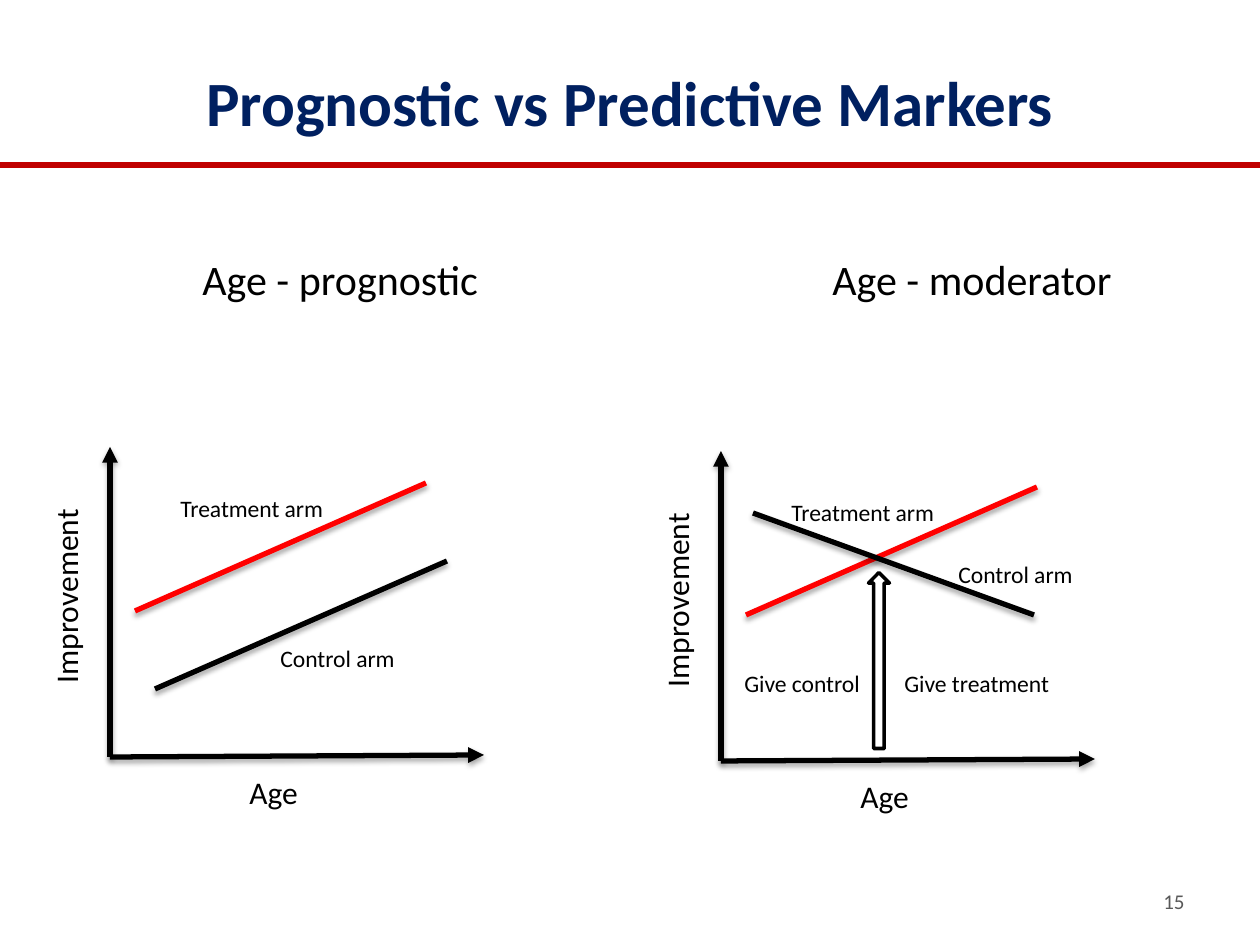
"""Build a slide contrasting a prognostic marker with a moderator."""
from lxml import etree
from pptx import Presentation
from pptx.dml.color import RGBColor
from pptx.enum.shapes import MSO_CONNECTOR, MSO_SHAPE
from pptx.enum.text import MSO_ANCHOR, PP_ALIGN
from pptx.oxml import parse_xml
from pptx.oxml.ns import nsdecls, qn
from pptx.util import Pt

SCALE = 914400 / 126
SHADOW = (
    f'<a:effectLst {nsdecls("a")}><a:outerShdw blurRad="39370" dist="22860" '
    'dir="5400000" rotWithShape="0"><a:srgbClr val="000000">'
    '<a:alpha val="35000"/></a:srgbClr></a:outerShdw></a:effectLst>'
)

prs = Presentation()
prs.slide_width, prs.slide_height = round(1260 * SCALE), round(945 * SCALE)
s = prs.slides.add_slide(prs.slide_layouts[6])


def add_text(text, box, size, color="000000", bold=False, align=PP_ALIGN.LEFT,
             anchor=MSO_ANCHOR.TOP, rotation=0):
    sp = s.shapes.add_textbox(*[round(v * SCALE) for v in box])
    sp.rotation = rotation
    tf = sp.text_frame
    tf.word_wrap = True
    tf.vertical_anchor = anchor
    tf.text = text
    p = tf.paragraphs[0]
    p.alignment = align
    font = p.runs[0].font
    font.name, font.size, font.bold = "Calibri", Pt(size), bold
    font.color.rgb = RGBColor.from_string(color)


def add_line(ends, color="000000", arrow=False, shadow=True):
    c = s.shapes.add_connector(MSO_CONNECTOR.STRAIGHT, *[round(v * SCALE) for v in ends])
    c.line.color.rgb = RGBColor.from_string(color)
    c.line.width = Pt(3)
    if arrow:
        etree.SubElement(c.line._get_or_add_ln(), qn("a:tailEnd"), type="triangle")
    effects = SHADOW if shadow else f'<a:effectLst {nsdecls("a")}/>'
    c._element.spPr.append(parse_xml(effects))


add_line((0, 165, 1260, 165), "C00000", shadow=False)
add_text("Prognostic vs Predictive Markers", (63, 38, 1134, 127), 36, "002060",
         bold=True, align=PP_ALIGN.CENTER, anchor=MSO_ANCHOR.MIDDLE)

plots = [
    ("Age - prognostic", 190, 0, 0, (155, 689, 447, 561), (268, 638)),
    ("Age - moderator", 820, 611, 4, (753, 513, 1034, 615), (946, 554)),
]
for heading, heading_x, dx, dy, control, control_label in plots:
    add_text(heading, (heading_x, 247, 340, 64), 24)
    add_line((135 + dx, 611 + dy, 426 + dx, 483 + dy), "FF0000")
    add_line(control)
    add_line((110 + dx, 757 + dy, 484 + dx, 755 + dy), arrow=True)
    add_line((110 + dx, 757 + dy, 110 + dx, 447 + dy), arrow=True)
    add_text("Age", (237 + dx, 767 + dy, 87, 50), 18)
    add_text("Improvement", (-102 + dx, 503 + dy, 335, 50), 18, rotation=270)
    add_text("Treatment arm", (168 + dx, 488 + dy, 169, 42), 13.5)
    add_text("Control arm", (*control_label, 185, 42), 13.5)

sp = s.shapes.add_shape(MSO_SHAPE.RIGHT_ARROW,
                        *[round(v * SCALE) for v in (791, 650, 176, 21)])
sp.rotation = 270
sp.shadow.inherit = False
sp.fill.background()
sp.line.color.rgb = RGBColor.from_string("000000")
sp.line.width = Pt(2)

for text, x in (("Give treatment", 892), ("Give control", 732)):
    add_text(text, (x, 663, 215, 42), 13.5)

add_text("15", (903, 876, 294, 50), 12, "595959", align=PP_ALIGN.RIGHT,
         anchor=MSO_ANCHOR.MIDDLE)

prs.save("out.pptx")
